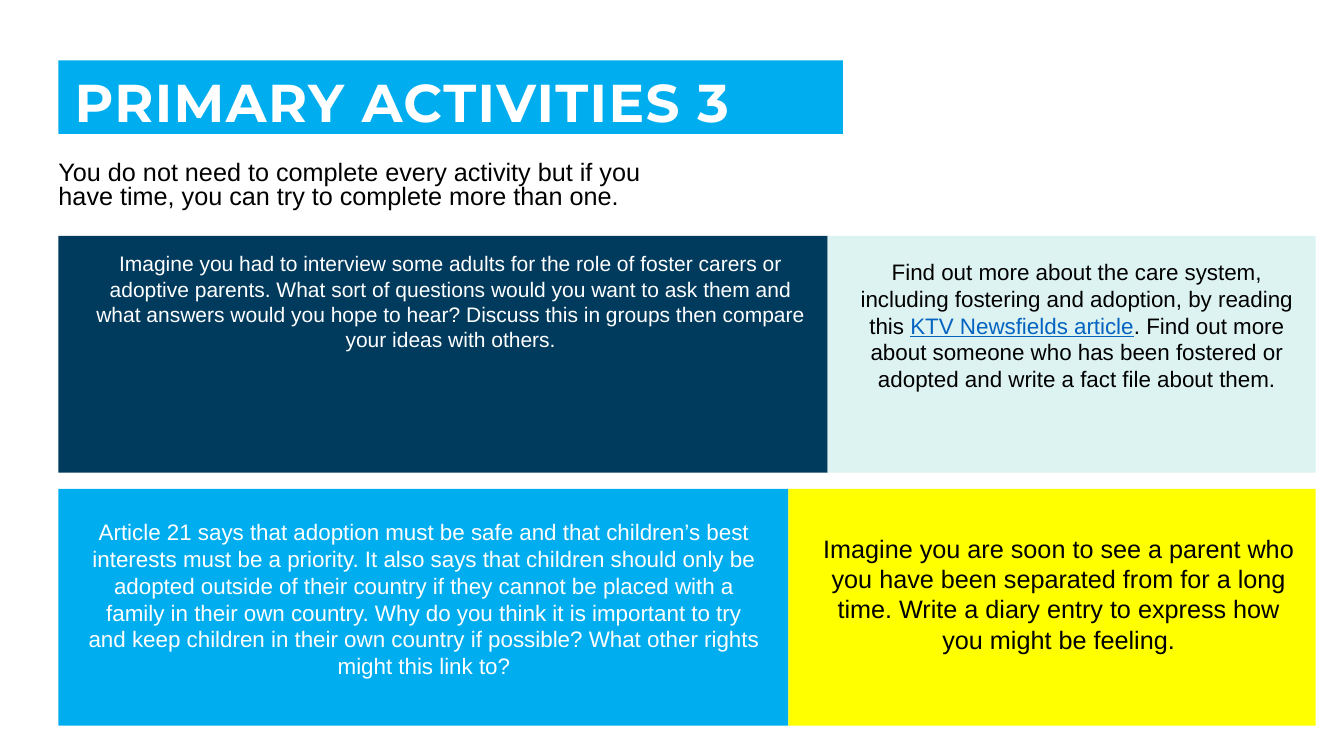
from dataclasses import dataclass
from typing import Optional

from pptx import Presentation
from pptx.dml.color import RGBColor
from pptx.enum.shapes import MSO_SHAPE
from pptx.enum.text import MSO_ANCHOR, PP_ALIGN
from pptx.util import Inches, Pt


@dataclass(frozen=True)
class Theme:
    white: str = "FFFFFF"
    black: str = "000000"
    navy: str = "003B5E"
    sky: str = "00AEEF"
    mint: str = "DDF3F1"
    yellow: str = "FFFF00"
    link: str = "0563C1"
    title_font: str = "Montserrat"
    body_font: str = "Arial"
    title_size: int = 38
    large: int = 18
    medium: int = 16
    small: int = 15


THEME = Theme()


@dataclass(frozen=True)
class Area:
    left: float
    top: float
    width: float
    height: float

    def lengths(self) -> tuple:
        return tuple(Inches(n) for n in (self.left, self.top, self.width, self.height))


@dataclass(frozen=True)
class Span:
    text: str
    size: int
    color: str
    font: str = THEME.body_font
    bold: bool = False
    underline: bool = False
    spacing: Optional[float] = None


@dataclass(frozen=True)
class Activity:
    panel: Area
    fill: str
    text_area: Area
    spans: tuple[Span, ...]


LEFT, RIGHT = 0.58, 13.05
TOP_ROW, BOTTOM_ROW, ROW_HEIGHT = 2.34, 4.85, 2.35
TOP_SPLIT, BOTTOM_SPLIT = 8.21, 7.82

TITLE_AREA = Area(LEFT, 0.6, 7.78, 0.73)
INTRO_AREA = Area(LEFT, 1.56, 6.21, 0.62)
TITLE = Span("PRIMARY ACTIVITIES 3", THEME.title_size, THEME.white,
             THEME.title_font, bold=True, spacing=1)
INTRO = Span("You do not need to complete every activity but if you have time, "
             "you can try to complete more than one.", THEME.large, THEME.black)


def panel(left: float, right: float, top: float) -> Area:
    return Area(left, top, right - left, ROW_HEIGHT)


ACTIVITIES = (
    Activity(
        panel(LEFT, TOP_SPLIT, TOP_ROW), THEME.navy, Area(0.85, 2.44, 7.24, 1.11),
        (Span("Imagine you had to interview some adults for the role of foster carers or "
              "adoptive parents. What sort of questions would you want to ask them and what "
              "answers would you hope to hear? Discuss this in groups then compare your "
              "ideas with others.", THEME.small, THEME.white),)),
    Activity(
        panel(LEFT, BOTTOM_SPLIT, BOTTOM_ROW), THEME.sky, Area(0.76, 5.09, 6.89, 1.72),
        (Span("Article 21 says that adoption must be safe and that children’s best interests "
              "must be a priority. It also says that children should only be adopted outside "
              "of their country if they cannot be placed with a family in their own country. "
              "Why do you think it is important to try and keep children in their own country "
              "if possible? What other rights might this link to?",
              THEME.medium, THEME.white),)),
    Activity(
        panel(TOP_SPLIT, RIGHT, TOP_ROW), THEME.mint, Area(8.41, 2.51, 4.54, 1.45),
        (Span("Find out more about the care system, including fostering and adoption, "
              "by reading this ", THEME.medium, THEME.black),
         Span("KTV Newsfields article", THEME.medium, THEME.link, underline=True),
         Span(". Find out more about someone who has been fostered or adopted and write "
              "a fact file about them.", THEME.medium, THEME.black))),
    Activity(
        panel(BOTTOM_SPLIT, RIGHT, BOTTOM_ROW), THEME.yellow, Area(8, 5.24, 5, 1.31),
        (Span("Imagine you are soon to see a parent who you have been separated from for a "
              "long time. Write a diary entry to express how you might be feeling.",
              THEME.large, THEME.black),)),
)


def add_panel(page, area: Area, fill: str):
    box = page.shapes.add_shape(MSO_SHAPE.RECTANGLE, *area.lengths())
    box.shadow.inherit = False
    box.fill.solid()
    box.fill.fore_color.rgb = RGBColor.from_string(fill)
    box.line.fill.background()
    return box


def write(box, spans: tuple[Span, ...], align: PP_ALIGN, line_spacing: float = 1.0,
          insets: tuple[float, ...] = (0.1, 0.05, 0.1, 0.05),
          anchor: MSO_ANCHOR = MSO_ANCHOR.TOP) -> None:
    """Fill the box with one paragraph; insets run left, top, right, bottom."""
    frame = box.text_frame
    frame.word_wrap = True
    frame.vertical_anchor = anchor
    (frame.margin_left, frame.margin_top,
     frame.margin_right, frame.margin_bottom) = (Inches(n) for n in insets)
    para = frame.paragraphs[0]
    para.alignment = align
    para.line_spacing = line_spacing
    for span in spans:
        run = para.add_run()
        run.text = span.text
        run.font.name = span.font
        run.font.size = Pt(span.size)
        run.font.bold = span.bold
        run.font.underline = span.underline
        run.font.color.rgb = RGBColor.from_string(span.color)
        if span.spacing is not None:
            run.font._element.set("spc", str(round(span.spacing * 100)))


def main() -> None:
    deck = Presentation()
    deck.slide_width, deck.slide_height = Inches(13.33), Inches(7.5)
    page = deck.slides.add_slide(deck.slide_layouts[6])

    write(add_panel(page, TITLE_AREA, THEME.sky), (TITLE,), PP_ALIGN.LEFT, 0.9,
          (0.16, 0.16, 0.12, 0), MSO_ANCHOR.MIDDLE)
    write(page.shapes.add_textbox(*INTRO_AREA.lengths()), (INTRO,), PP_ALIGN.LEFT, 0.8,
          (0, 0.05, 0.1, 0.05))
    for activity in ACTIVITIES:
        add_panel(page, activity.panel, activity.fill)
    for activity in ACTIVITIES:
        box = page.shapes.add_textbox(*activity.text_area.lengths())
        write(box, activity.spans, PP_ALIGN.CENTER)

    deck.save("out.pptx")


if __name__ == "__main__":
    main()
